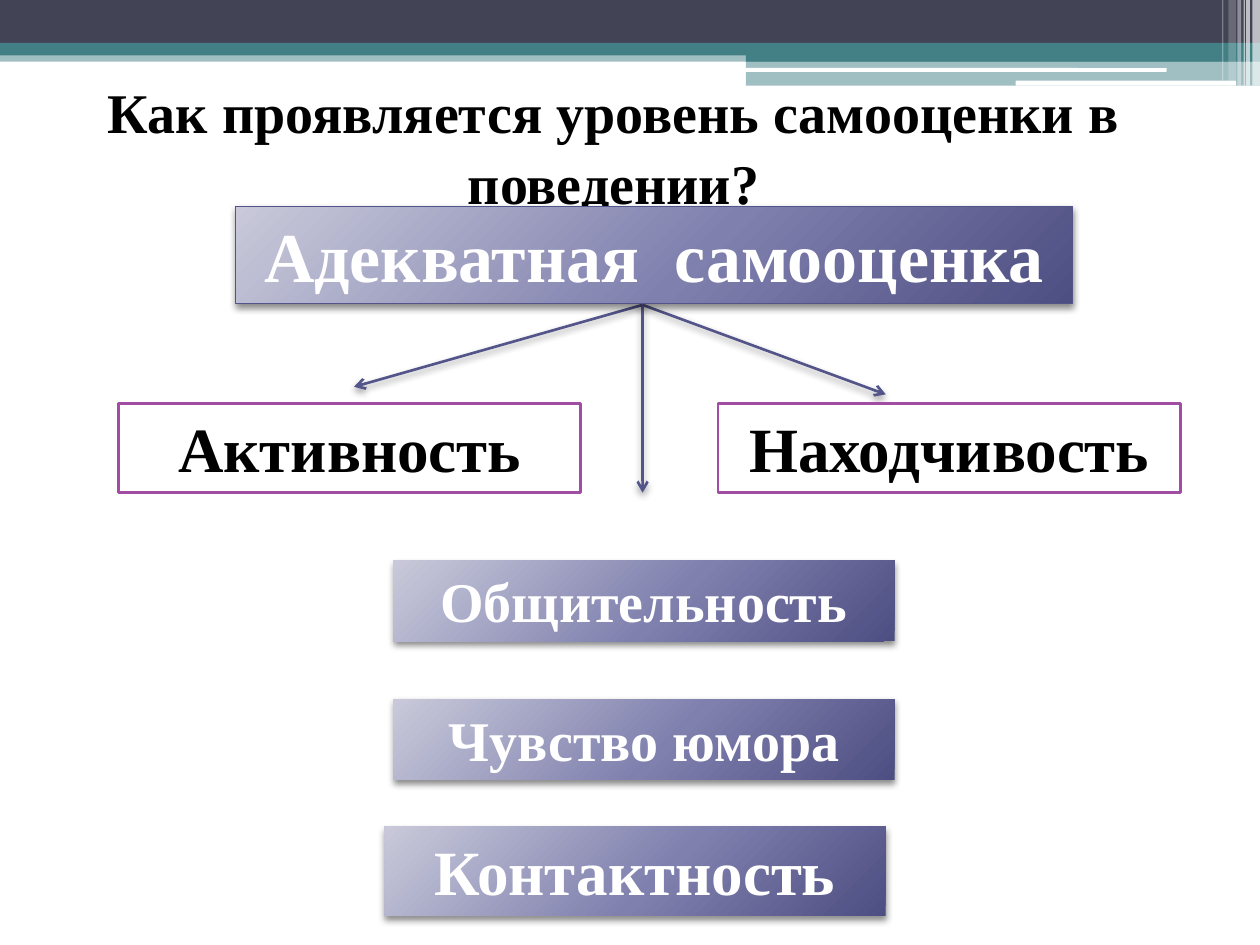
from lxml.etree import SubElement
from pptx import Presentation
from pptx.dml.color import RGBColor
from pptx.enum.shapes import MSO_CONNECTOR, MSO_SHAPE
from pptx.enum.text import MSO_ANCHOR, PP_ALIGN
from pptx.oxml.ns import qn
from pptx.util import Inches, Pt

FONT = "Times New Roman"
STOPS = ((0, "C9C9DA"), (55, "7F80AE"), (100, "4D4E81"))
CENTER = {"l": -40, "t": -90, "r": 140, "b": 190}


def color(value):
    """Turn a hex string into a colour."""
    return RGBColor.from_string(value)


def child(parent, tag, **attrs):
    """Append an XML element with the given attributes."""
    return SubElement(parent, qn(tag), {k: str(v) for k, v in attrs.items()})


def add_shadow(sp, alpha, blur):
    """Give a shape or connector a soft shadow below it."""
    spPr = sp._element.spPr
    effects = spPr.find(qn("a:effectLst"))
    if effects is None:
        effects = child(spPr, "a:effectLst")
    shadow = child(effects, "a:outerShdw", blurRad=Pt(blur), dist=Pt(2),
                   dir=90 * 60000, algn="ctr", rotWithShape=0)
    clr = child(shadow, "a:srgbClr", val="000000")
    child(clr, "a:alpha", val=alpha * 1000)


def set_gradient(sp):
    """Fill a shape with the violet gradient spreading from its upper left."""
    sp.fill.gradient()
    grad = sp._element.spPr.find(qn("a:gradFill"))
    for old in list(grad):
        grad.remove(old)
    stops = child(grad, "a:gsLst")
    for pos, value in STOPS:
        child(child(stops, "a:gs", pos=pos * 1000), "a:srgbClr", val=value)
    way = child(grad, "a:path", path="circle")
    child(way, "a:fillToRect", **{k: v * 1000 for k, v in CENTER.items()})


def set_text(tf, text, size, value):
    """Write one centred bold paragraph."""
    p = tf.paragraphs[0]
    p.alignment = PP_ALIGN.CENTER
    r = p.add_run()
    r.text = text
    formats = {"name": FONT, "size": Pt(size), "bold": True}
    for name, setting in formats.items():
        setattr(r.font, name, setting)
    r.font.color.rgb = color(value)
    return p


def add_block(slide, box, kind=MSO_SHAPE.RECTANGLE):
    """Add a plain shape without shadow or outline."""
    sp = slide.shapes.add_shape(kind, *map(Inches, box))
    sp.shadow.inherit = False
    sp.line.fill.background()
    return sp


def add_header(slide):
    """Draw the bands, white rules and stripes at the top."""
    teal, white = "438086", "FFFFFF"
    rect, rounded = MSO_SHAPE.RECTANGLE, MSO_SHAPE.ROUNDED_RECTANGLE
    bands = [
        ((0, 0.4, 10, 0.09), teal, 50, rect),
        ((0, 0, 10, 0.34), "424456", 100, rect),
        ((0, 0.34, 10, 0.1), teal, 100, rect),
        ((5.92, 0.39, 4.08, 0.1), teal, 100, rect),
        ((5.92, 0.48, 4.08, 0.2), teal, 50, rect),
        ((5.91, 0.54, 3.35, 0.03), white, 100, rounded),
        ((8.06, 0.64, 1.75, 0.04), white, 100, rounded),
    ]
    stripes = [(9.94, 0.06, 0.68, 65), (9.89, 0.03, 0.68, 65),
               (9.87, 0.01, 0.68, 60), (9.82, 0.03, 0.68, 40),
               (9.75, 0.06, 0.64, 20), (9.7, 0.01, 0.64, 30)]
    bands += [((x, 0, w, h), white, a, rect) for x, w, h, a in stripes]
    for box, value, alpha, kind in bands:
        sp = add_block(slide, box, kind)
        sp.fill.solid()
        sp.fill.fore_color.rgb = color(value)
        if alpha < 100:
            clr = sp._element.spPr.find(".//" + qn("a:srgbClr"))
            child(clr, "a:alpha", val=alpha * 1000)


def add_title(slide, box):
    """Place the title placeholder above the header bands."""
    title = slide.shapes.title
    slide.shapes._spTree.append(title._element)
    for name, value in zip(("left", "top", "width", "height"), box):
        setattr(title, name, Inches(value))
    tf = title.text_frame
    formats = {"word_wrap": True, "vertical_anchor": MSO_ANCHOR.TOP,
               "margin_top": Inches(0.1)}
    for name, setting in formats.items():
        setattr(tf, name, setting)
    p = set_text(tf, "Как проявляется уровень самооценки в поведении?", 32, "000000")
    p.line_spacing = 1.06


def add_arrows(slide, start, ends):
    """Fan arrows out from one point."""
    for end in ends:
        line = slide.shapes.add_connector(
            MSO_CONNECTOR.STRAIGHT, *map(Inches, start + end))
        line.line.color.rgb = color("53548A")
        line.line.width = Pt(1.5)
        child(line.line._get_or_add_ln(), "a:tailEnd", type="arrow")
        add_shadow(line, 40, 4.1)


def add_label(slide, box, text, size, filled=True, outline=None, width=1.5):
    """Add a text box shape, either gradient or white."""
    sp = add_block(slide, box)
    if filled:
        set_gradient(sp)
        add_shadow(sp, 45, 4)
    else:
        sp.fill.solid()
        sp.fill.fore_color.rgb = color("FFFFFF")
    if outline:
        sp.line.color.rgb = color(outline)
        sp.line.width = Pt(width)
    tf = sp.text_frame
    tf.word_wrap = True
    tf.vertical_anchor = MSO_ANCHOR.TOP
    set_text(tf, text, size, "FFFFFF" if filled else "000000")


def main():
    """Build the slide and save it."""
    prs = Presentation()
    prs.slide_width, prs.slide_height = Inches(10), Inches(7.5)
    slide = prs.slides.add_slide(prs.slide_layouts[5])
    add_header(slide)
    add_title(slide, (0.51, 0.48, 8.72, 1.95))
    add_arrows(slide, (5.1, 2.42), [(2.81, 3.07), (7.03, 3.13), (5.1, 3.91)])
    add_label(slide, (1.87, 1.64, 6.64, 0.77), "Адекватная  самооценка", 40,
              outline="53548A", width=0.75)
    for x, text in ((0.94, "Активность"), (5.7, "Находчивость")):
        add_label(slide, (x, 3.2, 3.67, 0.71), text, 36, False, "A04DA3")
    for x, y, h, text, size in ((3.12, 4.45, 0.64, "Общительность", 32),
                                (3.12, 5.55, 0.64, "Чувство юмора", 32),
                                (3.05, 6.56, 0.71, "Контактность", 36)):
        add_label(slide, (x, y, 3.98, h), text, size)
    prs.save("out.pptx")


if __name__ == "__main__":
    main()
